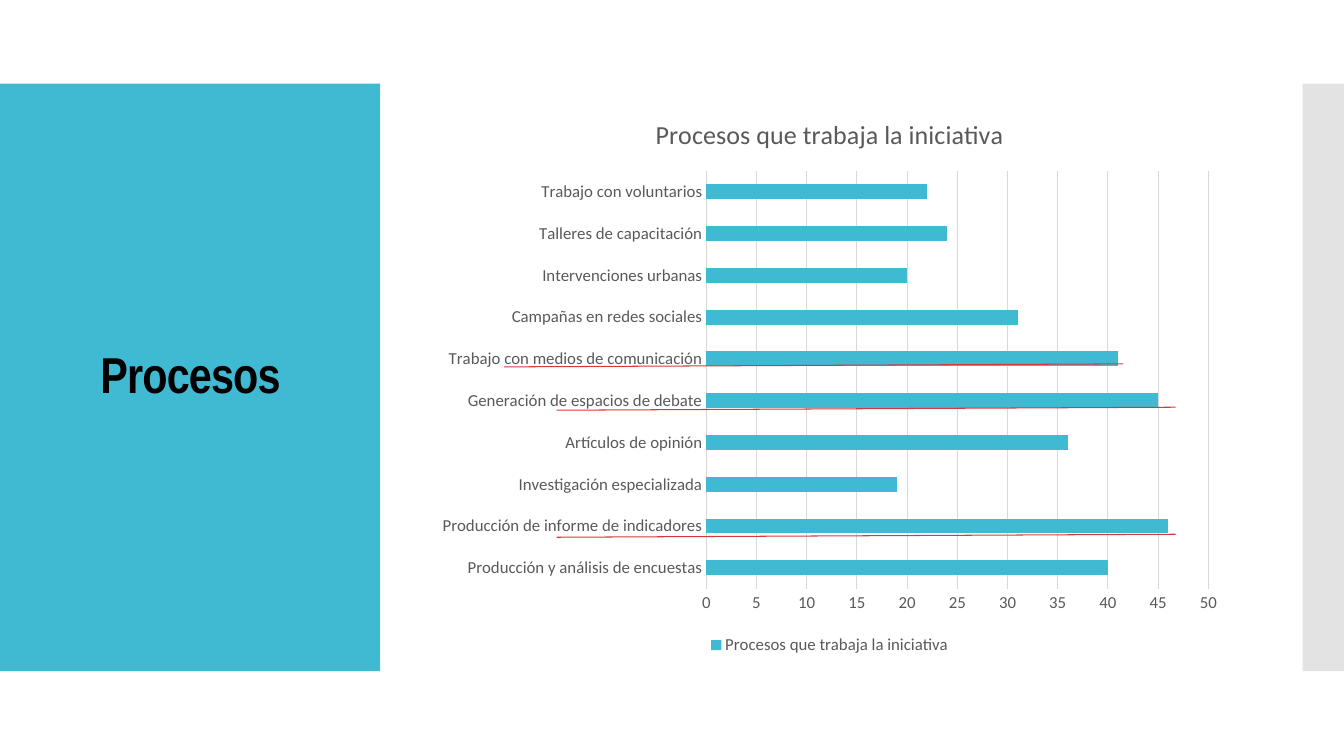
"""Builds the slide on the processes of the initiative, with a bar chart."""
from pptx import Presentation
from pptx.chart.data import CategoryChartData
from pptx.dml.color import RGBColor
from pptx.enum.chart import XL_CHART_TYPE, XL_LEGEND_POSITION, XL_TICK_MARK
from pptx.enum.shapes import MSO_CONNECTOR, MSO_SHAPE
from pptx.enum.text import MSO_ANCHOR, PP_ALIGN
from pptx.oxml.ns import qn
from pptx.util import Inches, Pt
from lxml.etree import SubElement

HEADING = "Procesos"
SERIES = "Procesos que trabaja la iniciativa"
COUNTS = {
    "Producción y análisis de encuestas": 40,
    "Producción de informe de indicadores": 46,
    "Investigación especializada": 19,
    "Artículos de opinión": 36,
    "Generación de espacios de debate": 45,
    "Trabajo con medios de comunicación": 41,
    "Campañas en redes sociales": 31,
    "Intervenciones urbanas": 20,
    "Talleres de capacitación": 24,
    "Trabajo con voluntarios": 22,
}
MARKS = [(5.52, 5.33), (5.52, 4.07), (5, 3.64)]
MARK_RUN, MARK_RISE = 6.14, 0.03
BANDS = [(0, 3.77, "accent", None), (12.92, 0.41, "edge", 50)]
BAND_TOP, BAND_HIGH = 0.83, 5.83


class Theme:
    """Colours, fonts and type sizes."""
    color = {
        "accent": RGBColor.from_string("40BAD2"),
        "edge": RGBColor.from_string("C8C8C8"),
        "ink": RGBColor.from_string("000000"),
        "label": RGBColor.from_string("595959"),
        "grid": RGBColor.from_string("D9D9D9"),
        "mark": RGBColor.from_string("D5393D"),
    }
    head, body = "Arial Narrow", "Calibri"
    big, title, small = Pt(36), Pt(18.6), Pt(12)
    thin = Pt(0.75)


def style(font, face, size, color, bold=False):
    """Set the look of a font."""
    font.name, font.size, font.bold = face, size, bold
    font.color.rgb = Theme.color[color]


def rule(line, color):
    """Set the look of a thin line."""
    line.color.rgb = Theme.color[color]
    line.width = Theme.thin


def add_band(slide, left, width, color, alpha):
    """Add one side band, see-through when alpha is given."""
    band = slide.shapes.add_shape(
        MSO_SHAPE.RECTANGLE, Inches(left), Inches(BAND_TOP),
        Inches(width), Inches(BAND_HIGH))
    band.shadow.inherit = False
    band.fill.solid()
    band.fill.fore_color.rgb = Theme.color[color]
    band.line.fill.background()
    if alpha is not None:
        tint = band.fill._xPr.find(".//" + qn("a:srgbClr"))
        SubElement(tint, qn("a:alpha")).set("val", str(alpha * 1000))


def add_heading(slide):
    """Add the heading on the left band."""
    box = slide.shapes.add_textbox(
        Inches(0.28), Inches(1.23), Inches(3.22), Inches(5.03))
    frame = box.text_frame
    frame.word_wrap = True
    frame.vertical_anchor = MSO_ANCHOR.MIDDLE
    para = frame.paragraphs[0]
    para.alignment, para.line_spacing = PP_ALIGN.CENTER, 0.9
    run = para.add_run()
    run.text = HEADING
    style(run.font, Theme.head, Theme.big, "ink", True)
    run.font._element.set("spc", "-60")


def add_bars(slide):
    """Add the bar chart."""
    data = CategoryChartData()
    data.categories = list(COUNTS)
    data.add_series(SERIES, list(COUNTS.values()))
    chart = slide.shapes.add_chart(
        XL_CHART_TYPE.BAR_CLUSTERED, Inches(4.23), Inches(0.94),
        Inches(8), Inches(5.6), data).chart
    style(chart.font, Theme.body, Theme.small, "label")

    chart.has_title = True
    run = chart.chart_title.text_frame.paragraphs[0].add_run()
    run.text = SERIES
    style(run.font, Theme.body, Theme.title, "label")
    chart.chart_title.include_in_layout = False

    chart.has_legend = True
    chart.legend.position = XL_LEGEND_POSITION.BOTTOM
    chart.legend.include_in_layout = False
    style(chart.legend.font, Theme.body, Theme.small, "label")

    cats, vals = chart.category_axis, chart.value_axis
    for axis in (cats, vals):
        axis.major_tick_mark = axis.minor_tick_mark = XL_TICK_MARK.NONE
        style(axis.tick_labels.font, Theme.body, Theme.small, "label")
    rule(cats.format.line, "grid")
    vals.format.line.fill.background()
    vals.minimum_scale, vals.maximum_scale, vals.major_unit = 0, 50, 5
    vals.has_major_gridlines = True
    rule(vals.major_gridlines.format.line, "grid")

    plot = chart.plots[0]
    plot.gap_width, plot.vary_by_categories = 182, False
    fill = plot.series[0].format.fill
    fill.solid()
    fill.fore_color.rgb = Theme.color["accent"]


def add_mark(slide, left, top):
    """Underline one bar with a slightly rising line."""
    mark = slide.shapes.add_connector(
        MSO_CONNECTOR.STRAIGHT, Inches(left), Inches(top),
        Inches(left + MARK_RUN), Inches(top - MARK_RISE))
    rule(mark.line, "mark")
    SubElement(mark._element.spPr, qn("a:effectLst"))


def main():
    """Build and save the slide."""
    deck = Presentation()
    deck.slide_width, deck.slide_height = Inches(13.33), Inches(7.5)
    slide = deck.slides.add_slide(deck.slide_layouts[6])
    for band in BANDS:
        add_band(slide, *band)
    add_heading(slide)
    add_bars(slide)
    for left, top in MARKS:
        add_mark(slide, left, top)
    deck.save("out.pptx")


if __name__ == "__main__":
    main()
